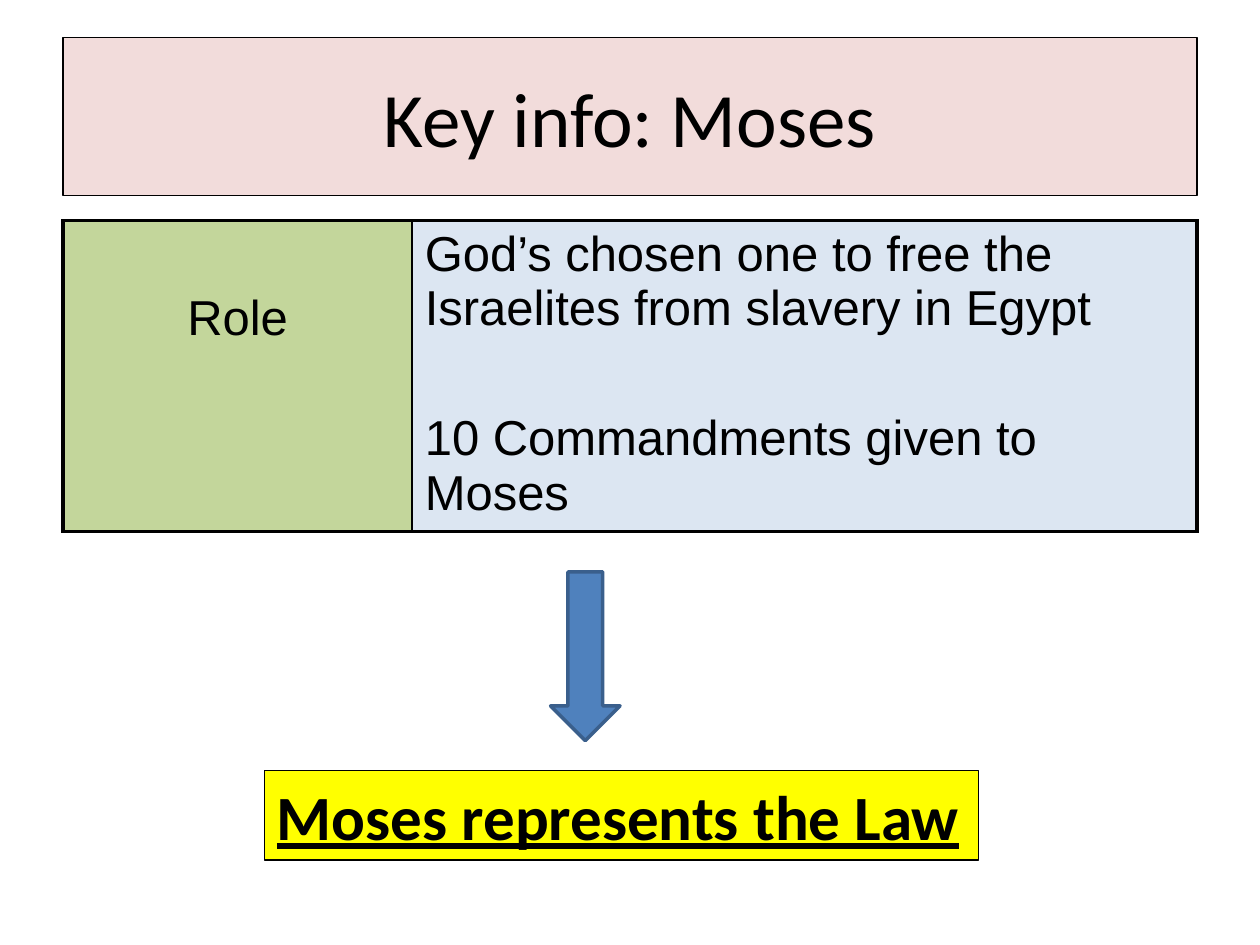
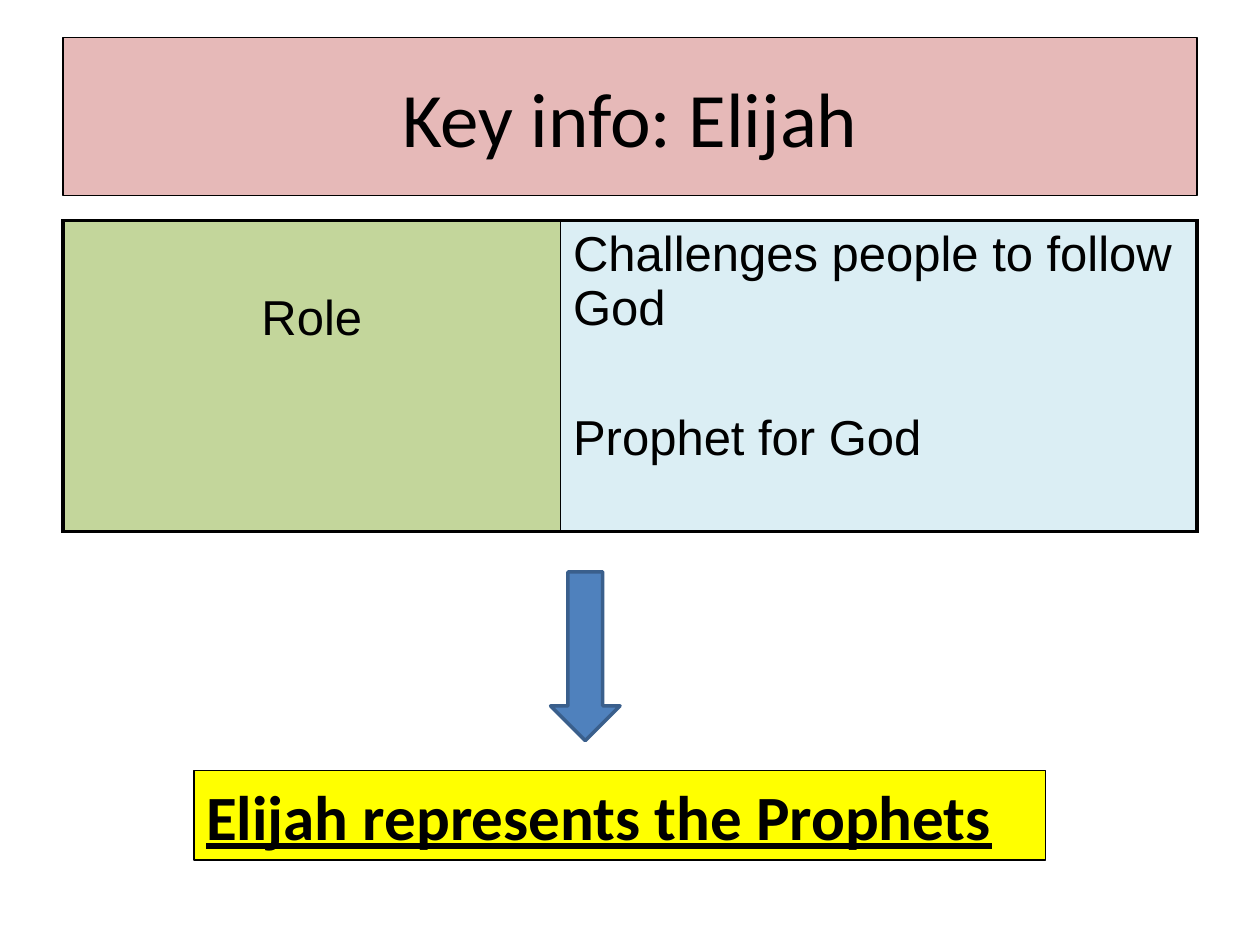
"""Build two key-info slides, on Moses and on Elijah."""
from dataclasses import dataclass

from lxml.etree import SubElement
from pptx import Presentation
from pptx.dml.color import RGBColor
from pptx.enum.shapes import MSO_SHAPE
from pptx.enum.text import MSO_ANCHOR, PP_ALIGN
from pptx.oxml.ns import qn
from pptx.util import Cm, Pt

BLACK = "000000"
ROLE_GREEN = "C3D69B"
CALLOUT_YELLOW = "FFFF00"
ARROW_BLUE = "4F81BD"
ARROW_EDGE = "3A5F8C"
HEADING_FONT = "Calibri"
TABLE_FONT = "Arial"
LEFT = Cm(1.27)
CONTENT_WIDTH = Cm(22.86)
THIN, THICK = Pt(1), Pt(2.25)


@dataclass(frozen=True)
class KeyInfo:
    title: str
    title_fill: str
    role_width: Cm
    roles: tuple[str, ...]
    roles_fill: str
    summary: str
    summary_left: Cm
    summary_width: Cm


KEY_INFOS = (
    KeyInfo(
        "Key info: Moses", "F2DCDB", Cm(7.04),
        ("God’s chosen one to free the Israelites from slavery in Egypt",
         "10 Commandments given to Moses"),
        "DCE6F2", "Moses represents the Law", Cm(5.33), Cm(14.4),
    ),
    KeyInfo(
        "Key info: Elijah", "E6B9B8", Cm(10.03),
        ("Challenges people to follow God", "Prophet for God"),
        "DBEEF4", "Elijah represents the Prophets", Cm(3.91), Cm(17.17),
    ),
)


def color(value: str) -> RGBColor:
    return RGBColor.from_string(value)


def paint(shape, fill: str, line: str, width: float) -> None:
    shape.fill.solid()
    shape.fill.fore_color.rgb = color(fill)
    shape.line.color.rgb = color(line)
    shape.line.width = Pt(width)


def style_text(text_frame, font_name: str, size: int, strong: bool = False) -> None:
    for paragraph in text_frame.paragraphs:
        for run in paragraph.runs:
            run.font.name = font_name
            run.font.size = Pt(size)
            run.font.color.rgb = color(BLACK)
            if strong:
                run.font.bold = True
                run.font.underline = True


def set_borders(cell, left: int, right: int, top: int, bottom: int) -> None:
    properties = cell._tc.get_or_add_tcPr()
    for side, width in zip("LRTB", (left, right, top, bottom)):
        line = SubElement(properties, qn(f"a:ln{side}"), w=str(int(width)))
        fill = SubElement(line, qn("a:solidFill"))
        SubElement(fill, qn("a:srgbClr"), val=BLACK)


def fill_cell(cell, text: str, fill: str) -> None:
    cell.fill.solid()
    cell.fill.fore_color.rgb = color(fill)
    cell.text_frame.text = text
    style_text(cell.text_frame, TABLE_FONT, 28)


def add_title(slide, info: KeyInfo) -> None:
    title = slide.shapes.title
    title.left, title.top = LEFT, Cm(0.76)
    title.width, title.height = CONTENT_WIDTH, Cm(3.18)
    paint(title, info.title_fill, BLACK, 0.75)
    title.text_frame.text = info.title
    title.text_frame.vertical_anchor = MSO_ANCHOR.MIDDLE
    title.text_frame.paragraphs[0].alignment = PP_ALIGN.CENTER
    style_text(title.text_frame, HEADING_FONT, 44)


def add_role_table(slide, info: KeyInfo) -> None:
    table = slide.shapes.add_table(
        1, 2, LEFT, Cm(4.45), CONTENT_WIDTH, Cm(6.27)).table
    table.first_row = False
    table.horz_banding = False
    table.columns[0].width = info.role_width
    table.columns[1].width = CONTENT_WIDTH - info.role_width
    label, roles = table.cell(0, 0), table.cell(0, 1)

    set_borders(label, THICK, THIN, THICK, THICK)
    fill_cell(label, "Role", ROLE_GREEN)
    label.margin_top = Cm(1.42)
    label.text_frame.paragraphs[0].alignment = PP_ALIGN.CENTER

    set_borders(roles, THIN, THICK, THICK, THICK)
    fill_cell(roles, "\n".join(info.roles), info.roles_fill)
    for paragraph in roles.text_frame.paragraphs[1:]:
        paragraph.space_before = Pt(43)


def add_arrow(slide) -> None:
    arrow = slide.shapes.add_shape(
        MSO_SHAPE.DOWN_ARROW, Cm(11.1), Cm(11.53), Cm(1.4), Cm(3.4))
    arrow.shadow.inherit = False
    paint(arrow, ARROW_BLUE, ARROW_EDGE, 2)


def add_summary(slide, info: KeyInfo) -> None:
    summary = slide.shapes.add_textbox(
        info.summary_left, Cm(15.54), info.summary_width, Cm(1.8))
    paint(summary, CALLOUT_YELLOW, BLACK, 0.75)
    summary.text_frame.word_wrap = True
    summary.text_frame.text = info.summary
    style_text(summary.text_frame, HEADING_FONT, 36, strong=True)


def main() -> None:
    presentation = Presentation()
    presentation.slide_width, presentation.slide_height = Cm(25.4), Cm(19.05)
    title_only = presentation.slide_layouts.get_by_name("Title Only")
    for info in KEY_INFOS:
        slide = presentation.slides.add_slide(title_only)
        add_title(slide, info)
        add_role_table(slide, info)
        add_summary(slide, info)
        add_arrow(slide)
    presentation.save("out.pptx")


if __name__ == "__main__":
    main()
